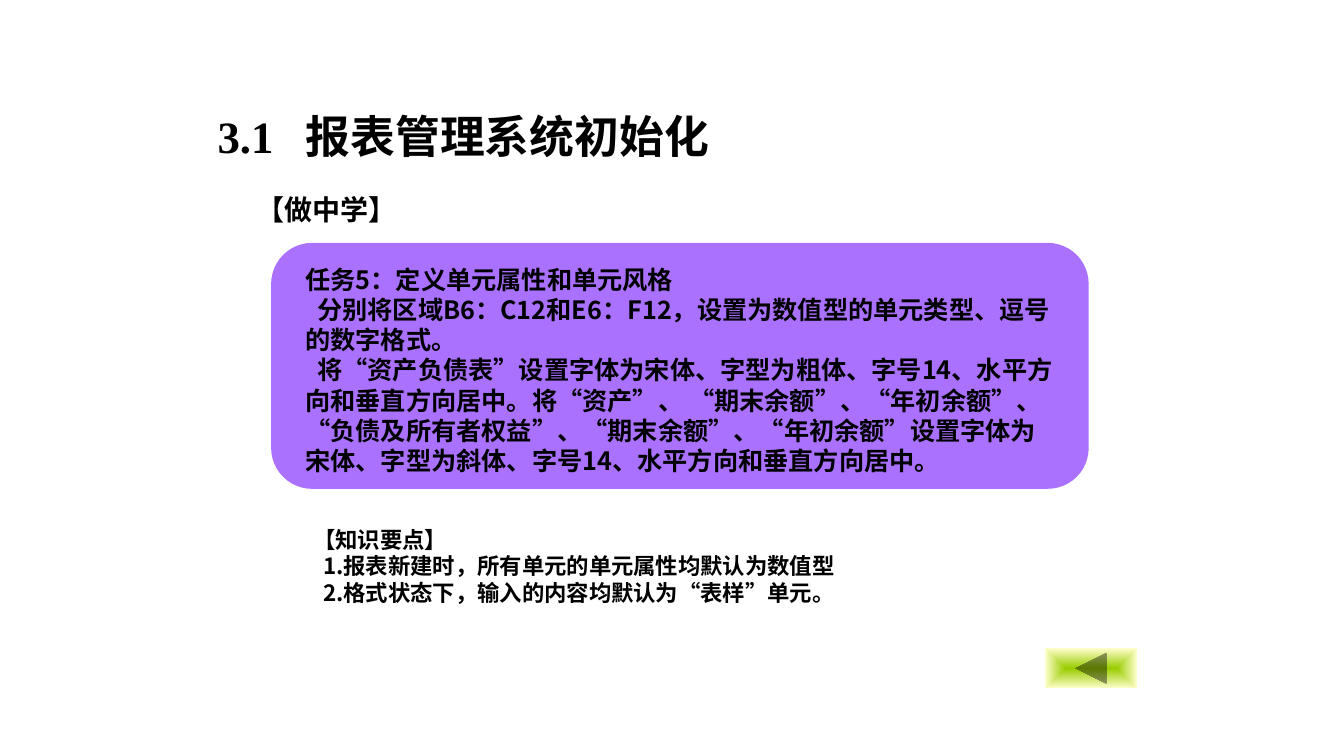
import pptx
import pptx.util
import pptx.dml.color
import pptx.enum.shapes
import pptx.enum.text
import pptx.oxml
import pptx.oxml.ns

Pt = pptx.util.Pt
SHAPES = pptx.enum.shapes.MSO_SHAPE
ANCHOR = pptx.enum.text.MSO_ANCHOR
CJK_FONT = "Noto Sans CJK SC"
LATIN_FONT = "Times New Roman"


def color(value):
    return pptx.dml.color.RGBColor.from_string(value)


def add_plain_shape(slide, preset, box):
    shape = slide.shapes.add_shape(preset, *[Pt(length) for length in box])
    shape.shadow.inherit = False
    shape.line.fill.background()
    return shape


def add_text(slide, box, lines, size, font, anchor=ANCHOR.TOP, wrap=True):
    textbox = slide.shapes.add_textbox(*[Pt(length) for length in box])
    frame = textbox.text_frame
    frame.word_wrap = wrap
    frame.vertical_anchor = anchor
    frame.auto_size = pptx.enum.text.MSO_AUTO_SIZE.SHAPE_TO_FIT_TEXT
    for index, (words, indent) in enumerate(lines):
        paragraph = frame.paragraphs[0] if index == 0 else frame.add_paragraph()
        if indent:
            properties = paragraph._p.get_or_add_pPr()
            properties.set("marL", "0")
            properties.set("indent", str(Pt(indent)))
        run = paragraph.add_run()
        run.text = words
        run.font.size = Pt(size)
        run.font.bold = True
        run.font.color.rgb = color("000000")
        run.font.name = font
        east_asian = pptx.oxml.parse_xml(
            f'<a:ea {pptx.oxml.ns.nsdecls("a")} typeface="{CJK_FONT}"/>')
        run.font._element.append(east_asian)
    return frame


def add_heading(slide, box):
    left, top, width, height = box
    heading = add_text(slide, (left, top, width, 46),
                       [("3.1\t报表管理系统初始化", 0)], 32, LATIN_FONT)
    tab_stops = pptx.oxml.parse_xml(
        f'<a:tabLst {pptx.oxml.ns.nsdecls("a")}><a:tab pos="{Pt(63)}" algn="l"/></a:tabLst>')
    heading.paragraphs[0]._p.get_or_add_pPr().append(tab_stops)
    add_text(slide, (left + 28, top + height - 32, 115, 32),
             [("【做中学】", 0)], 20, LATIN_FONT, ANCHOR.MIDDLE, False)


def add_task(slide, box):
    left, top, width, height = box
    panel = add_plain_shape(slide, SHAPES.ROUNDED_RECTANGLE, box)
    panel.fill.solid()
    panel.fill.fore_color.rgb = color("AA71FF")
    task_lines = [
        ("任务5：定义单元属性和单元风格", 0),
        ("分别将区域B6：C12和E6：F12，设置为数值型的单元类型、逗号的数字格式。", 8.5),
        ("将“资产负债表”设置字体为宋体、字型为粗体、字号14、水平方向和垂直方向居中。"
         "将“资产”、 “期末余额”、“年初余额”、“负债及所有者权益”、“期末余额”、"
         "“年初余额”设置字体为宋体、字型为斜体、字号14、水平方向和垂直方向居中。", 8.5),
    ]
    add_text(slide, (left + 17.3, top + 11.5, width - 31, height - 16),
             task_lines, 18, CJK_FONT)


def add_key_points(slide, box):
    key_points = [
        ("【知识要点】", 0),
        ("1.报表新建时，所有单元的单元属性均默认为数值型", 7),
        ("2.格式状态下，输入的内容均默认为“表样”单元。", 7),
    ]
    add_text(slide, box, key_points, 16, CJK_FONT, ANCHOR.MIDDLE)


def add_back_button(slide, box):
    button = add_plain_shape(slide, SHAPES.ACTION_BUTTON_BACK_OR_PREVIOUS, box)
    glow = pptx.oxml.parse_xml(
        f'<a:gradFill {pptx.oxml.ns.nsdecls("a")} rotWithShape="1"><a:gsLst>'
        '<a:gs pos="0"><a:srgbClr val="99CC00"/></a:gs>'
        '<a:gs pos="100000"><a:srgbClr val="FFFFCC"/></a:gs></a:gsLst>'
        '<a:path path="rect"><a:fillToRect l="50000" t="50000" r="50000" b="50000"/>'
        '</a:path></a:gradFill>')
    button._element.spPr.insert(2, glow)


def main():
    presentation = pptx.Presentation()
    presentation.slide_width = Pt(960)
    presentation.slide_height = Pt(540)
    slide = presentation.slides.add_slide(presentation.slide_layouts[6])
    add_back_button(slide, (746.6, 463, 65.5, 28.8))
    add_task(slide, (193.7, 173.5, 584, 175.7))
    add_key_points(slide, (216.7, 371.5, 538.6, 65.5))
    add_heading(slide, (148.3, 74.2, 640.8, 91.4))
    presentation.save("out.pptx")


if __name__ == "__main__":
    main()
